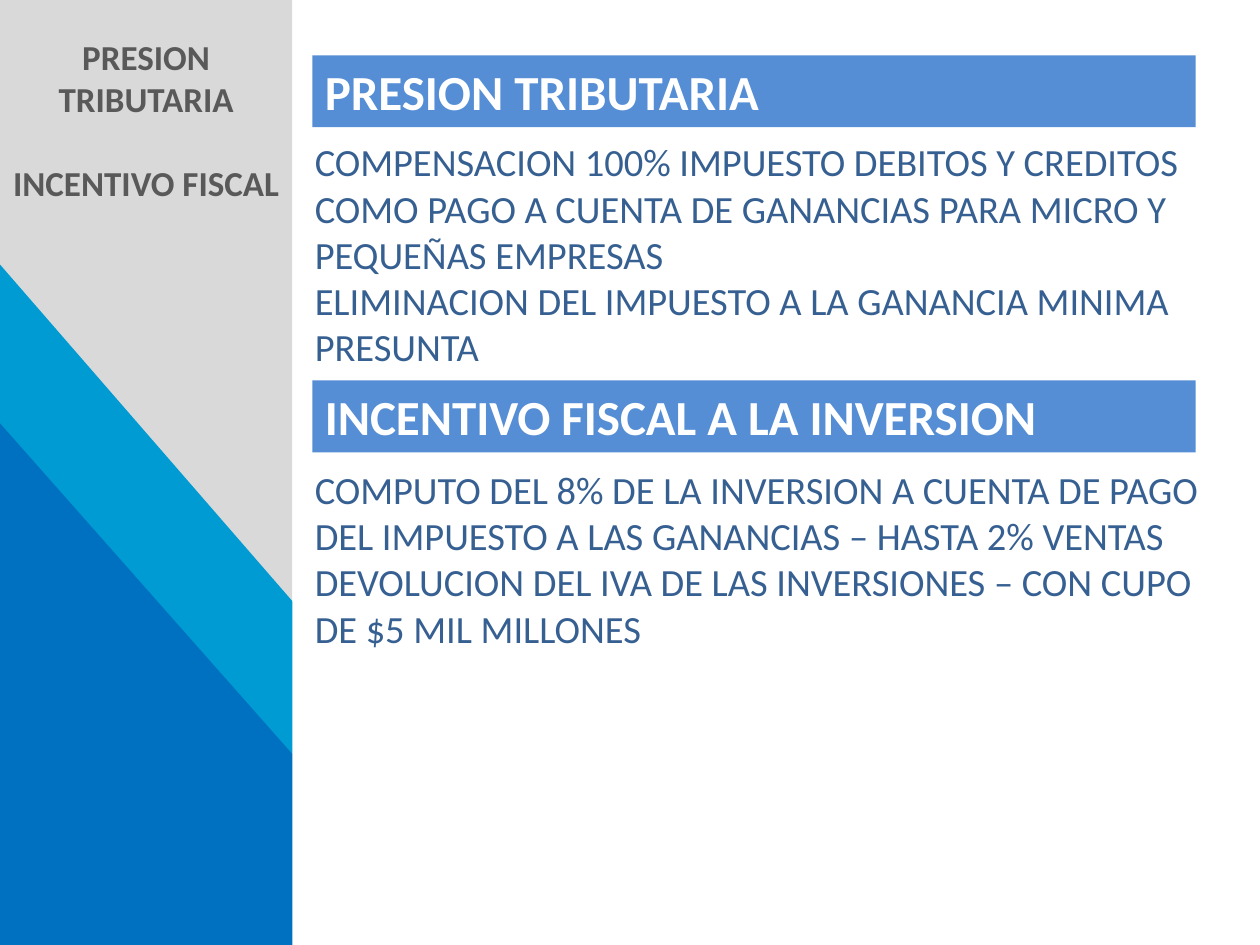
from pptx import Presentation
from pptx.dml.color import RGBColor
from pptx.enum.shapes import MSO_SHAPE as Shape
from pptx.enum.text import MSO_ANCHOR as Anchor, PP_ALIGN as Align
from pptx.util import Inches, Pt

WHITE = RGBColor(0xFF, 0xFF, 0xFF)
LIGHT_GRAY = RGBColor(0xD9, 0xD9, 0xD9)
DARK_GRAY = RGBColor(0x59, 0x59, 0x59)
CYAN = RGBColor(0x00, 0x9B, 0xD2)
BLUE = RGBColor(0x00, 0x70, 0xC0)
HEADING_BLUE = RGBColor(0x55, 0x8E, 0xD5)
TEXT_BLUE = RGBColor(0x37, 0x60, 0x92)

SLIDE_WIDTH, SLIDE_HEIGHT = 10, 7.5
SIDEBAR_WIDTH = 2.32
HEADING_HEIGHT = 0.57

SECTIONS = [
    # heading top, heading, body top, body height, body paragraphs
    (0.44, "PRESION TRIBUTARIA", 1.05, 1.95, [
        "COMPENSACION 100% IMPUESTO DEBITOS Y CREDITOS COMO PAGO A CUENTA "
        "DE GANANCIAS PARA MICRO Y PEQUEÑAS EMPRESAS",
        "ELIMINACION DEL IMPUESTO A LA GANANCIA MINIMA PRESUNTA",
    ]),
    (3.02, "INCENTIVO FISCAL A LA INVERSION", 3.65, 1.58, [
        "COMPUTO DEL 8% DE LA INVERSION A CUENTA DE PAGO DEL IMPUESTO "
        "A LAS GANANCIAS – HASTA 2% VENTAS",
        "DEVOLUCION DEL IVA DE LAS INVERSIONES – CON CUPO DE $5 MIL MILLONES",
    ]),
]


def write_text(shape, lines, *, size, color, bold=False, align=Align.LEFT,
               anchor=Anchor.TOP, gap=0):
    """Write one paragraph per line, with gap points between paragraphs."""
    frame = shape.text_frame
    frame.word_wrap = True
    frame.vertical_anchor = anchor
    for index, line in enumerate(lines):
        paragraph = frame.add_paragraph() if index else frame.paragraphs[0]
        paragraph.alignment = align
        paragraph.space_before = Pt(gap if index else 0)
        run = paragraph.add_run()
        run.text = line
        run.font.name = "Calibri"
        run.font.size = Pt(size)
        run.font.bold = bold
        run.font.color.rgb = color


def add_filled(slide, kind, color, left, top, width, height):
    shape = slide.shapes.add_shape(
        kind, Inches(left), Inches(top), Inches(width), Inches(height))
    shape.shadow.inherit = False
    shape.fill.solid()
    shape.fill.fore_color.rgb = color
    shape.line.fill.background()
    return shape


def add_text(slide, lines, left, top, width, height, **text_format):
    box = slide.shapes.add_textbox(
        Inches(left), Inches(top), Inches(width), Inches(height))
    write_text(box, lines, **text_format)


def add_sidebar(slide, left, top, width, height):
    """Gray band with two diagonals, trimmed by the white content panel."""
    add_filled(slide, Shape.RECTANGLE, LIGHT_GRAY, left, top, width, height)
    for color, offset, base in ((CYAN, 2.1, 4.69), (BLUE, 3.36, 3.66)):
        add_filled(slide, Shape.RIGHT_TRIANGLE, color,
                   left, top + offset, base, height - offset)
    add_filled(slide, Shape.RECTANGLE, WHITE,
               left + width, top, SLIDE_WIDTH - left - width, height)
    add_text(slide, ["PRESION TRIBUTARIA", "INCENTIVO FISCAL"],
             left, top + 0.23, width, 1.45,
             size=20, color=DARK_GRAY, bold=True, align=Align.CENTER, gap=24)


def add_section(slide, left, width, heading_top, heading, body_top,
                body_height, paragraphs):
    add_text(slide, paragraphs, left, body_top, width, body_height,
             size=22, color=TEXT_BLUE)
    bar = add_filled(slide, Shape.RECTANGLE, HEADING_BLUE,
                     left + 0.08, heading_top, width - 0.23, HEADING_HEIGHT)
    write_text(bar, [heading], size=28, color=WHITE, bold=True,
               anchor=Anchor.TOP)


def main():
    presentation = Presentation()
    presentation.slide_width = Inches(SLIDE_WIDTH)
    presentation.slide_height = Inches(SLIDE_HEIGHT)
    slide = presentation.slides.add_slide(presentation.slide_layouts[6])
    add_sidebar(slide, 0, 0, SIDEBAR_WIDTH, SLIDE_HEIGHT)
    for section in SECTIONS:
        add_section(slide, 2.4, 7.24, *section)
    presentation.save("out.pptx")


if __name__ == "__main__":
    main()
